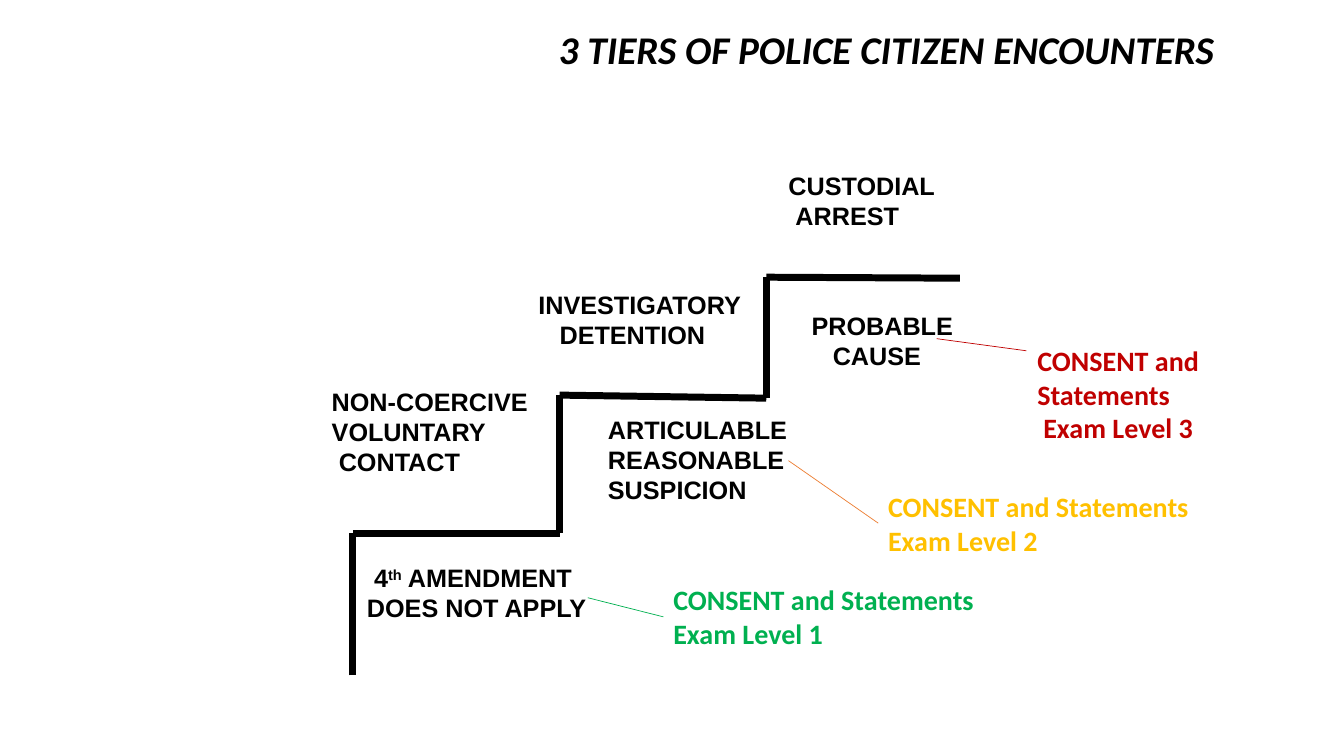
from lxml.etree import SubElement
from pptx import Presentation
from pptx.dml.color import RGBColor
from pptx.enum.shapes import MSO_CONNECTOR as Connector
from pptx.enum.text import PP_ALIGN as Align
from pptx.oxml.ns import qn
from pptx.util import Inches, Pt

GRID = 0.1
BLACK = "000000"


def colour(text):
    return RGBColor.from_string(text)


def units(*cells):
    return [Inches(cell * GRID) for cell in cells]


def apply(target, values):
    for name, value in values.items():
        setattr(target, name, value)


class Board:
    title = {"name": "Calibri", "size": Pt(28), "bold": True, "italic": True}
    label = {"name": "Arial", "size": Pt(18), "bold": True}
    exam = {"name": "Calibri", "size": Pt(20), "bold": True}

    def __init__(self, deck):
        self.slide = deck.slides.add_slide(deck.slide_layouts[6])

    def text(self, area, lines, font, ink=BLACK, inset=0, **layout):
        box = self.slide.shapes.add_textbox(*units(*area))
        frame = box.text_frame
        side, edge = units(inset, inset / 2)
        apply(frame, {"word_wrap": True, "margin_left": side, "margin_right": side,
                      "margin_top": edge, "margin_bottom": edge})
        for index, (indent, *pieces) in enumerate(lines):
            para = frame.add_paragraph() if index else frame.paragraphs[0]
            apply(para, layout)
            if indent:
                para._p.get_or_add_pPr().set("marL", str(Inches(indent * GRID)))
            for order, piece in enumerate(pieces):
                span = para.add_run()
                span.text = piece
                apply(span.font, font)
                span.font.color.rgb = colour(ink)
                if order == 1:
                    span.font._element.set("baseline", "30000")

    def line(self, start, end, ink=BLACK, weight=5):
        link = self.slide.shapes.add_connector(Connector.STRAIGHT, *units(*start, *end))
        link.line.color.rgb = colour(ink)
        link.line.width = Pt(weight)
        SubElement(link._element.spPr, qn("a:effectLst"))


STAIRS = [(35, 67), (35, 52.9), (55.5, 52.9), (55.5, 39.2),
          (76, 39.5), (76, 27.5), (95.2, 27.6)]

TIERS = [
    ((78.2, 16.9, 16, 8.3), [(0, "CUSTODIAL"), (0.7, "ARREST")]),
    ((80.5, 30.8, 16, 8.3), [(0, "PROBABLE"), (2.1, "CAUSE")]),
    ((53.4, 28.7, 21.5, 8.3), [(0, "INVESTIGATORY"), (2.1, "DETENTION")]),
    ((32.9, 38.3, 20.2, 12.5), [(0, "NON-COERCIVE"), (0, "VOLUNTARY"), (0.7, "CONTACT")]),
    ((60.3, 41.1, 19, 12.5), [(0, "ARTICULABLE"), (0, "REASONABLE"), (0, "SUSPICION")]),
    ((36.4, 55.8, 23, 8.3), [(0.7, "4", "th", " AMENDMENT"), (0, "DOES NOT APPLY")]),
]

EXAMS = [
    ((101.9, 33.6, 26.7, 11.1), [(0, "CONSENT and Statements"), (0.6, "Exam Level 3")],
     "C00000", (92.9, 33.6), (101.8, 34.8), "C00000"),
    ((87.1, 48.1, 33.3, 7.7), [(0, "CONSENT and Statements Exam Level 2")],
     "FFC000", (78.2, 45.7), (87.1, 51.9), "ED7D31"),
    ((65.8, 57.3, 37, 7.7), [(0, "CONSENT and Statements Exam Level 1")],
     "00B050", (65.8, 61.2), (58.3, 59.3), "00B050"),
]


def main():
    deck = Presentation()
    apply(deck, {"slide_width": Inches(13.33), "slide_height": Inches(7.5)})
    board = Board(deck)
    board.text((42.5, 2.5, 90.8, 6), [(0, "3 TIERS OF POLICE CITIZEN ENCOUNTERS")],
               board.title, inset=1, alignment=Align.CENTER, line_spacing=0.9)
    for area, lines in TIERS:
        board.text(area, lines, board.label)
    for start, end in zip(STAIRS, STAIRS[1:]):
        board.line(start, end)
    for area, lines, ink, start, end, link_ink in EXAMS:
        board.text(area, lines, board.exam, ink, inset=1)
        board.line(start, end, link_ink, 0.5)
    deck.save("out.pptx")


if __name__ == "__main__":
    main()
